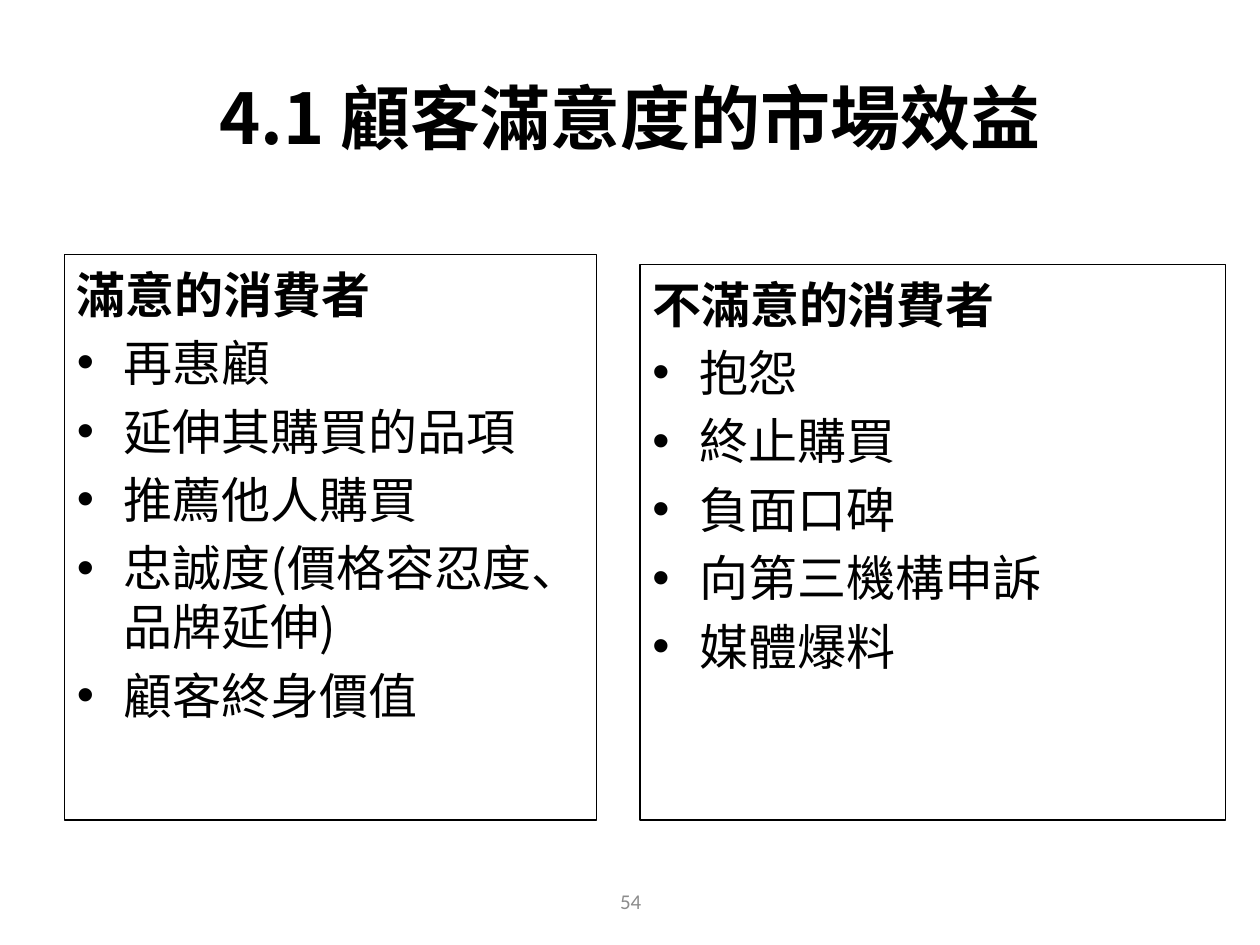
from dataclasses import dataclass

from lxml import etree
from pptx import Presentation
from pptx.dml.color import RGBColor
from pptx.enum import shapes, text
from pptx.oxml import ns
from pptx.util import Cm, Pt


@dataclass(frozen=True)
class Theme:
    ink: RGBColor = RGBColor(0x00, 0x00, 0x00)
    muted: RGBColor = RGBColor(0x8C, 0x8C, 0x8C)
    main_font: str = "Noto Sans CJK SC"
    number_font: str = "Calibri"
    title_size: Pt = Pt(40)
    body_size: Pt = Pt(28)
    number_size: Pt = Pt(12)
    line_height: Pt = Pt(33.5)
    gap: Pt = Pt(5.6)
    hanging: Cm = Cm(0.95)


THEME = Theme()

# Left, top, width, height in centimetres, then heading and points
PANELS = [
    ((1.3, 5.13, 10.72, 11.4), "滿意的消費者",
     ["再惠顧", "延伸其購買的品項", "推薦他人購買",
      "忠誠度(價格容忍度、品牌延伸)", "顧客終身價值"]),
    ((12.9, 5.33, 11.81, 11.2), "不滿意的消費者",
     ["抱怨", "終止購買", "負面口碑", "向第三機構申訴", "媒體爆料"]),
]


def set_all(target, values):
    for name, value in values.items():
        setattr(target, name, value)


def write(paragraph, words, size, bold=False, font=THEME.main_font,
          color=THEME.ink):
    """Add one run, with the same font for Latin and East Asian text."""
    run = paragraph.add_run()
    run.text = words
    set_all(run.font, {"size": size, "bold": bold, "name": font})
    run.font.color.rgb = color
    latin = run.font._element.find(ns.qn("a:latin"))
    east_asian = etree.Element(ns.qn("a:ea"), typeface=font)
    latin.addnext(east_asian)


def add_bullet(paragraph):
    properties = paragraph._p.get_or_add_pPr()
    properties.set("marL", str(THEME.hanging))
    properties.set("indent", str(-THEME.hanging))
    etree.SubElement(properties, ns.qn("a:buFont"), typeface="Arial")
    etree.SubElement(properties, ns.qn("a:buChar"), char="•")


def add_title(slide, words):
    title = slide.shapes.title
    set_all(title, {"left": Cm(1.27), "top": Cm(0.76),
                    "width": Cm(22.86), "height": Cm(3.18)})
    title.text_frame.vertical_anchor = text.MSO_ANCHOR.MIDDLE
    paragraph = title.text_frame.paragraphs[0]
    paragraph.alignment = text.PP_ALIGN.CENTER
    write(paragraph, words, THEME.title_size, bold=True)


def add_panel(slide, box, heading, points):
    panel = slide.shapes.add_shape(shapes.MSO_SHAPE.RECTANGLE, *map(Cm, box))
    panel.shadow.inherit = False
    panel.fill.background()
    panel.line.color.rgb = THEME.ink
    panel.line.width = Pt(0.75)
    frame = panel.text_frame
    set_all(frame, {"word_wrap": True, "margin_top": Cm(0.2),
                    "vertical_anchor": text.MSO_ANCHOR.TOP})
    for index, words in enumerate([heading, *points]):
        paragraph = frame.add_paragraph() if index else frame.paragraphs[0]
        if index:
            add_bullet(paragraph)
            paragraph.space_before = THEME.gap
        set_all(paragraph, {"alignment": text.PP_ALIGN.LEFT,
                            "line_spacing": THEME.line_height})
        write(paragraph, words, THEME.body_size, bold=index == 0)


def add_page_number(slide, number):
    box = slide.shapes.add_textbox(Cm(8.69), Cm(17.65), Cm(8.05), Cm(1.02))
    set_all(box.text_frame, {"word_wrap": True,
                             "vertical_anchor": text.MSO_ANCHOR.MIDDLE})
    paragraph = box.text_frame.paragraphs[0]
    paragraph.alignment = text.PP_ALIGN.CENTER
    write(paragraph, number, THEME.number_size, font=THEME.number_font,
          color=THEME.muted)


def main():
    presentation = Presentation()
    set_all(presentation, {"slide_width": Cm(25.4), "slide_height": Cm(19.05)})
    slide = presentation.slides.add_slide(presentation.slide_layouts[5])

    # Heading, the two customer groups, page number
    add_title(slide, "4.1 顧客滿意度的市場效益")
    for box, heading, points in PANELS:
        add_panel(slide, box, heading, points)
    add_page_number(slide, "54")

    presentation.save("out.pptx")


if __name__ == "__main__":
    main()
